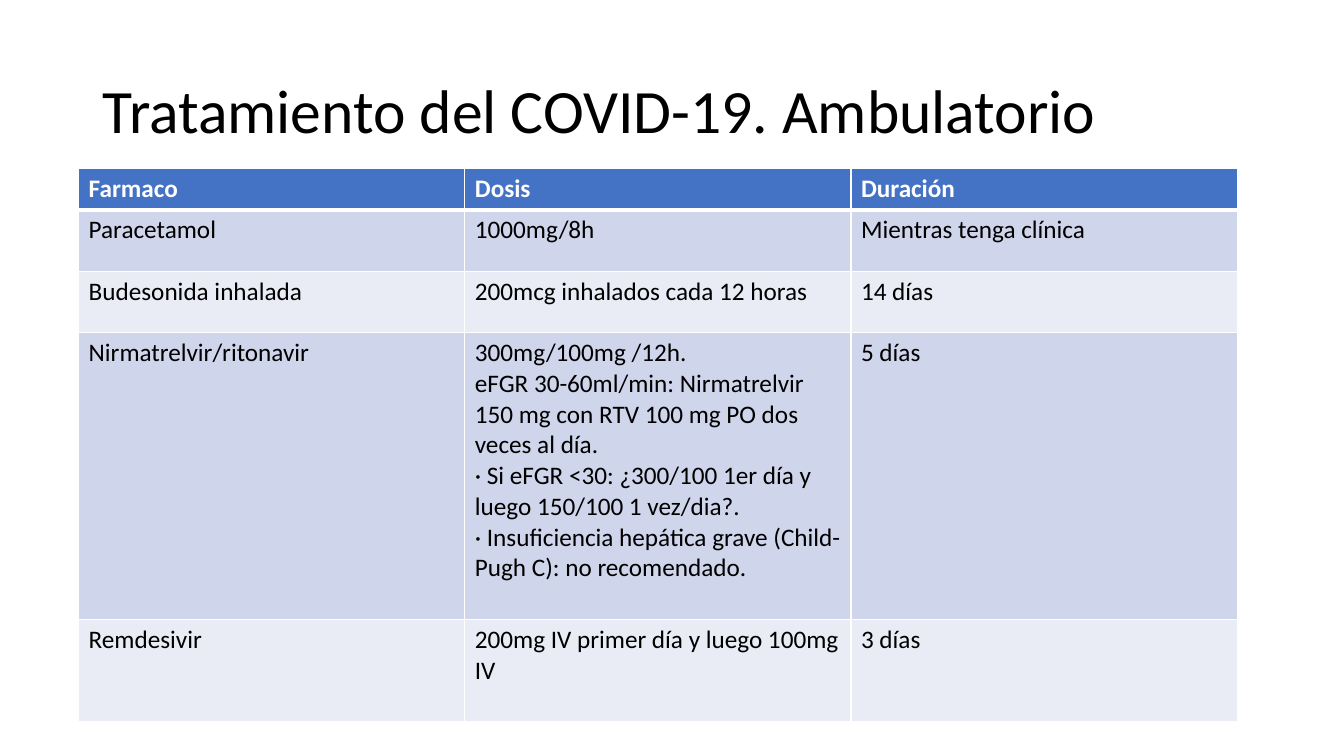
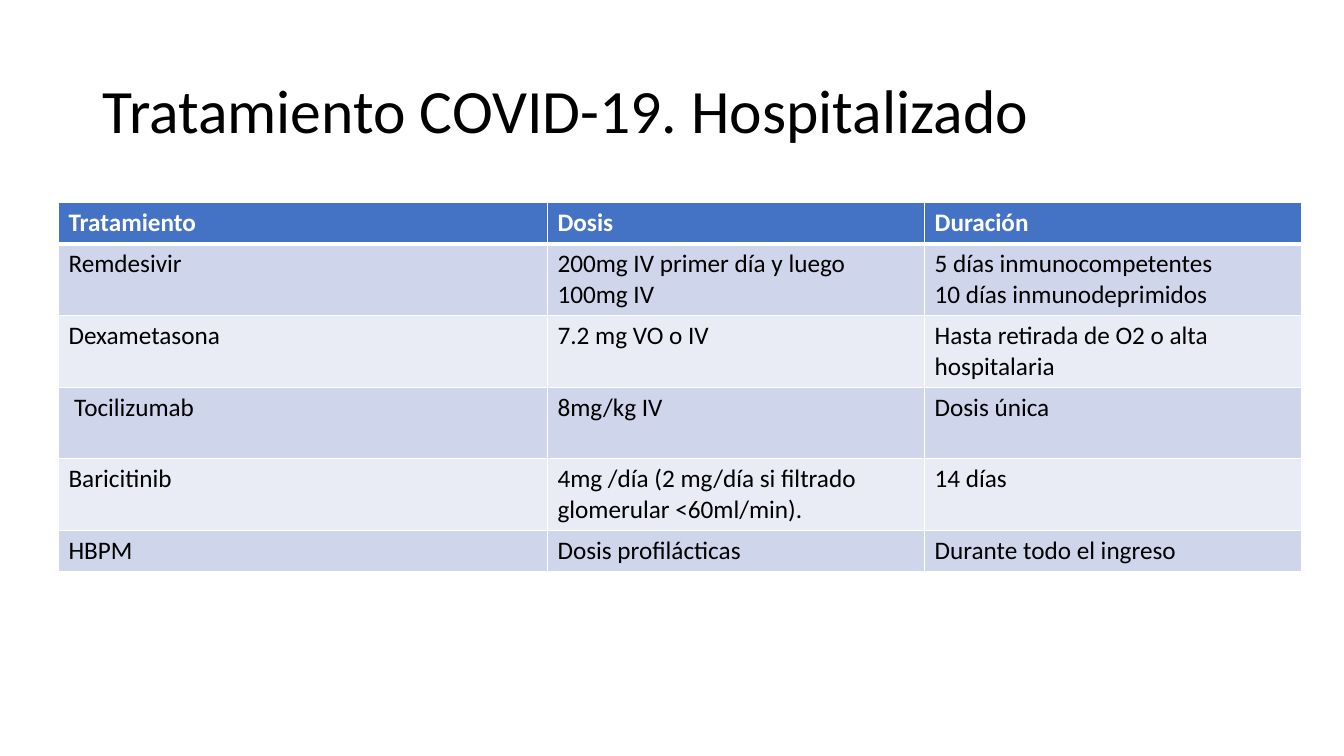
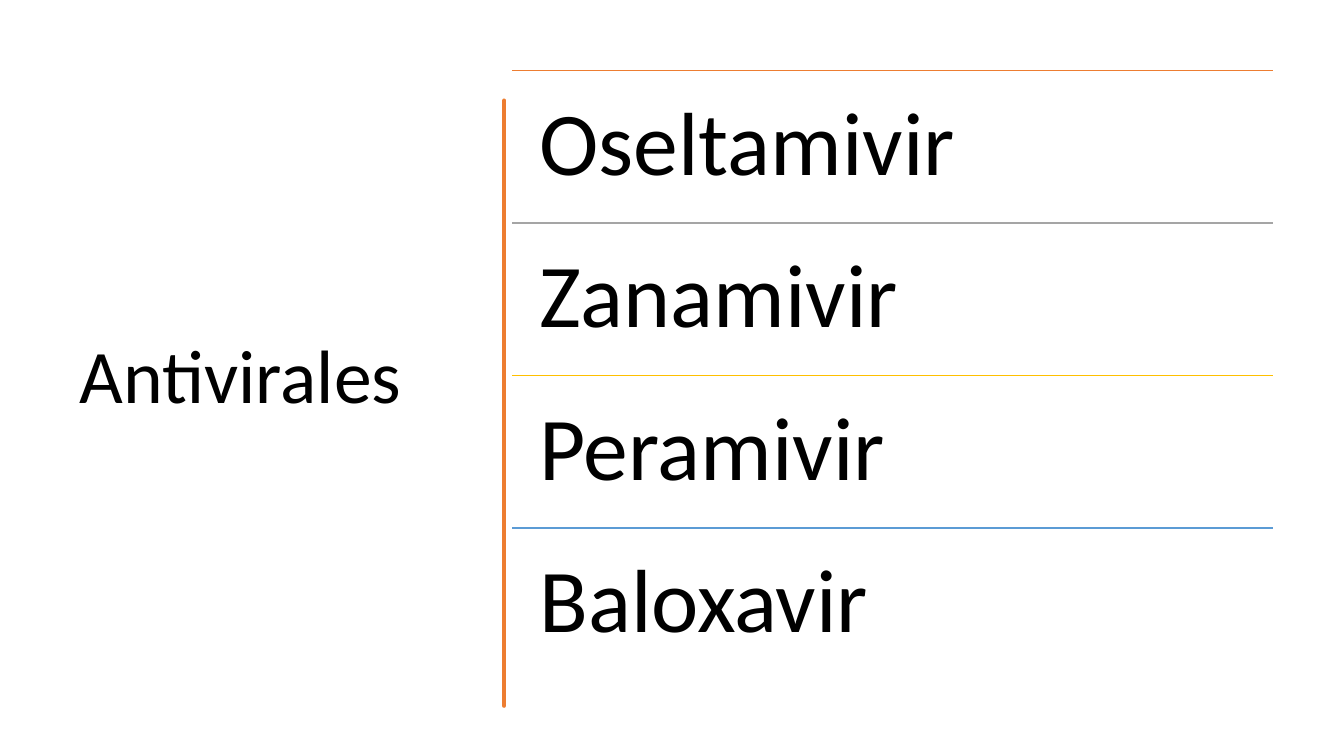
"""Build three slides on COVID-19 treatment and antivirals."""
from dataclasses import dataclass
from typing import Any

from lxml import etree
from pptx import Presentation
from pptx import util as u
from pptx.dml.color import RGBColor
from pptx.enum import shapes, text
from pptx.oxml import ns

BLACK = RGBColor(0x00, 0x00, 0x00)
WHITE = RGBColor(0xFF, 0xFF, 0xFF)
BLUE = RGBColor(0x44, 0x72, 0xC4)
BAND_DARK = RGBColor(0xCF, 0xD5, 0xEA)
BAND_LIGHT = RGBColor(0xE9, 0xEB, 0xF5)
ORANGE = RGBColor(0xED, 0x7D, 0x31)
GRAY = RGBColor(0xA5, 0xA5, 0xA5)
GOLD = RGBColor(0xFF, 0xC0, 0x00)
SKY = RGBColor(0x5B, 0x9B, 0xD5)
FONT = "Calibri"
TITLE_BOX = (0.92, 0.4, 11.5, 1.45)
TITLE_ONLY = 5


@dataclass
class TableSlide:
    """A title with a table of treatments."""

    title: str
    left: float
    top: float
    widths: list[float]
    heights: list[float]
    rows: list[tuple[str, str, str]]


@dataclass
class Drug:
    """An antiviral and the colour of the rule above it."""

    name: str
    color: RGBColor


TABLE_SLIDES = [
    TableSlide(
        "Tratamiento del COVID-19. Ambulatorio", 0.78, 1.67,
        [3.83] * 3, [0.41, 0.61, 0.61, 2.85, 1.01],
        [
            ("Farmaco", "Dosis", "Duración"),
            ("Paracetamol", "1000mg/8h", "Mientras tenga clínica"),
            ("Budesonida inhalada", "200mcg inhalados cada 12 horas", "14 días"),
            ("Nirmatrelvir/ritonavir",
             "300mg/100mg /12h.\n"
             "eFGR 30-60ml/min: Nirmatrelvir 150 mg con RTV 100 mg PO dos veces al día.\v"
             "· Si eFGR <30: ¿300/100 1er día y luego 150/100 1 vez/dia?.\v"
             "· Insuficiencia hepática grave (Child-Pugh C): no recomendado.",
             "5 días"),
            ("Remdesivir", "200mg IV primer día y luego 100mg IV", "3 días"),
        ],
    ),
    TableSlide(
        "Tratamiento COVID-19. Hospitalizado", 0.58, 2.01,
        [4.85, 3.74, 3.74], [0.41] + [0.71] * 4 + [0.41],
        [
            ("Tratamiento", "Dosis", "Duración"),
            ("Remdesivir", "200mg IV primer día y luego 100mg IV",
             "5 días inmunocompetentes\n10 días inmunodeprimidos"),
            ("Dexametasona", "7.2 mg VO o IV", "Hasta retirada de O2 o alta hospitalaria"),
            (" Tocilizumab", "8mg/kg IV", "Dosis única"),
            ("Baricitinib", "4mg /día (2 mg/día si filtrado glomerular <60ml/min).", "14 días"),
            ("HBPM", "Dosis profilácticas", "Durante todo el ingreso"),
        ],
    ),
]
DRUGS = [Drug("Oseltamivir", ORANGE), Drug("Zanamivir", GRAY),
         Drug("Peramivir", GOLD), Drug("Baloxavir", SKY)]
BAR_OUTLINE = [
    (4.75, 0.84), (4.76, 1.15), (4.75, 1.46), (4.74, 1.7), (4.75, 2.26),
    (4.75, 2.94), (4.76, 3.3), (4.75, 3.56), (4.76, 3.95), (4.75, 4.36),
    (4.73, 4.71), (4.75, 5.1), (4.76, 5.48), (4.75, 5.84), (4.75, 6.76),
    (4.73, 6.76), (4.72, 6.4), (4.73, 6.13), (4.73, 5.57), (4.72, 5.2),
    (4.73, 4.77), (4.72, 4.46), (4.73, 4.15), (4.73, 3.35), (4.73, 2.5),
    (4.74, 2.1), (4.73, 1.81), (4.72, 1.6), (4.74, 1.2), (4.73, 0.84),
]


def apply(obj: Any, **values: Any) -> None:
    """Set attributes of an object from format values."""
    for name, value in values.items():
        setattr(obj, name, value)


def style_text(tf: Any, size: float, color: RGBColor, bold: bool = False,
               spacing: float = 1.0) -> None:
    """Format every paragraph of a text frame."""
    for p in tf.paragraphs:
        apply(p, alignment=text.PP_ALIGN.LEFT, line_spacing=spacing)
        for r in p.runs:
            apply(r.font, name=FONT, size=u.Pt(size), bold=bold)
            r.font.color.rgb = color


def add_titled_slide(prs: Any, title: str, box: tuple[float, ...], size: float) -> Any:
    """Add a title-only slide with its title placed and formatted."""
    s = prs.slides.add_slide(prs.slide_layouts[TITLE_ONLY])
    sp = s.shapes.title
    places = map(u.Inches, box)
    apply(sp, **dict(zip(("left", "top", "width", "height"), places)))
    tf = sp.text_frame
    tf.text = title
    apply(tf, word_wrap=True, auto_size=text.MSO_AUTO_SIZE.NONE,
          vertical_anchor=text.MSO_ANCHOR.MIDDLE)
    style_text(tf, size, BLACK, spacing=0.9)
    return s


def set_borders(cell: Any, top: float, bottom: float) -> None:
    """Give a cell white borders of the given widths in points."""
    tc_pr = cell._tc.get_or_add_tcPr()
    for side, width in (("L", 1), ("R", 1), ("T", top), ("B", bottom)):
        ln = etree.SubElement(tc_pr, ns.qn(f"a:ln{side}"), w=str(u.Pt(width)))
        fill = etree.SubElement(ln, ns.qn("a:solidFill"))
        etree.SubElement(fill, ns.qn("a:srgbClr"), val=str(WHITE))


def add_treatment_table(s: Any, spec_slide: TableSlide) -> None:
    """Draw the banded treatment table of a slide."""
    t = spec_slide
    table = s.shapes.add_table(
        len(t.rows), len(t.widths), u.Inches(t.left), u.Inches(t.top),
        u.Inches(sum(t.widths)), u.Inches(sum(t.heights))).table
    for column, width in zip(table.columns, t.widths):
        column.width = u.Inches(width)
    for i, (row, height, values) in enumerate(zip(table.rows, t.heights, t.rows)):
        row.height = u.Inches(height)
        header = i == 0
        band = BLUE if header else (BAND_LIGHT, BAND_DARK)[i % 2]
        for cell, value in zip(row.cells, values):
            cell.text_frame.text = value
            style_text(cell.text_frame, 18, WHITE if header else BLACK, header)
            set_borders(cell, 3 if i == 1 else 1, 3 if header else 1)
            cell.fill.solid()
            cell.fill.fore_color.rgb = band


def add_bar(s: Any) -> None:
    """Draw the hand-drawn vertical bar."""
    builder = s.shapes.build_freeform(*BAR_OUTLINE[0], scale=u.Inches(1))
    builder.add_line_segments(BAR_OUTLINE[1:], close=True)
    sp = builder.convert_to_shape()
    sp.shadow.inherit = False
    sp.fill.solid()
    sp.fill.fore_color.rgb = ORANGE
    sp.line.color.rgb = ORANGE
    sp.line.width = u.Pt(3.25)


def add_drugs(s: Any) -> None:
    """Draw the ruled list of antivirals."""
    left, top, width, step = 5.08, 0.7, 7.55, 1.513
    for i, drug in enumerate(DRUGS):
        y = u.Inches(top + i * step)
        rule = s.shapes.add_connector(
            shapes.MSO_CONNECTOR.STRAIGHT, u.Inches(left), y, u.Inches(left + width), y)
        rule.line.color.rgb = drug.color
        rule.line.width = u.Pt(1)
        etree.SubElement(rule._element.spPr, ns.qn("a:effectLst"))
        sp = s.shapes.add_textbox(u.Inches(left), y, u.Inches(width), u.Inches(step))
        tf = sp.text_frame
        tf.text = drug.name
        inset = u.Inches(0.27)
        apply(tf, word_wrap=True, margin_left=inset, margin_right=inset,
              margin_top=inset, margin_bottom=inset)
        style_text(tf, 64, BLACK, spacing=0.9)


def main() -> None:
    """Build and save the presentation."""
    prs = Presentation()
    apply(prs, slide_width=u.Inches(13.33), slide_height=u.Inches(7.5))
    for table_slide in TABLE_SLIDES:
        s = add_titled_slide(prs, table_slide.title, TITLE_BOX, 44)
        add_treatment_table(s, table_slide)
    s = add_titled_slide(prs, "Antivirales", (0.69, 0.7, 3.74, 6.11), 54)
    add_bar(s)
    add_drugs(s)
    prs.save("out.pptx")


if __name__ == "__main__":
    main()
